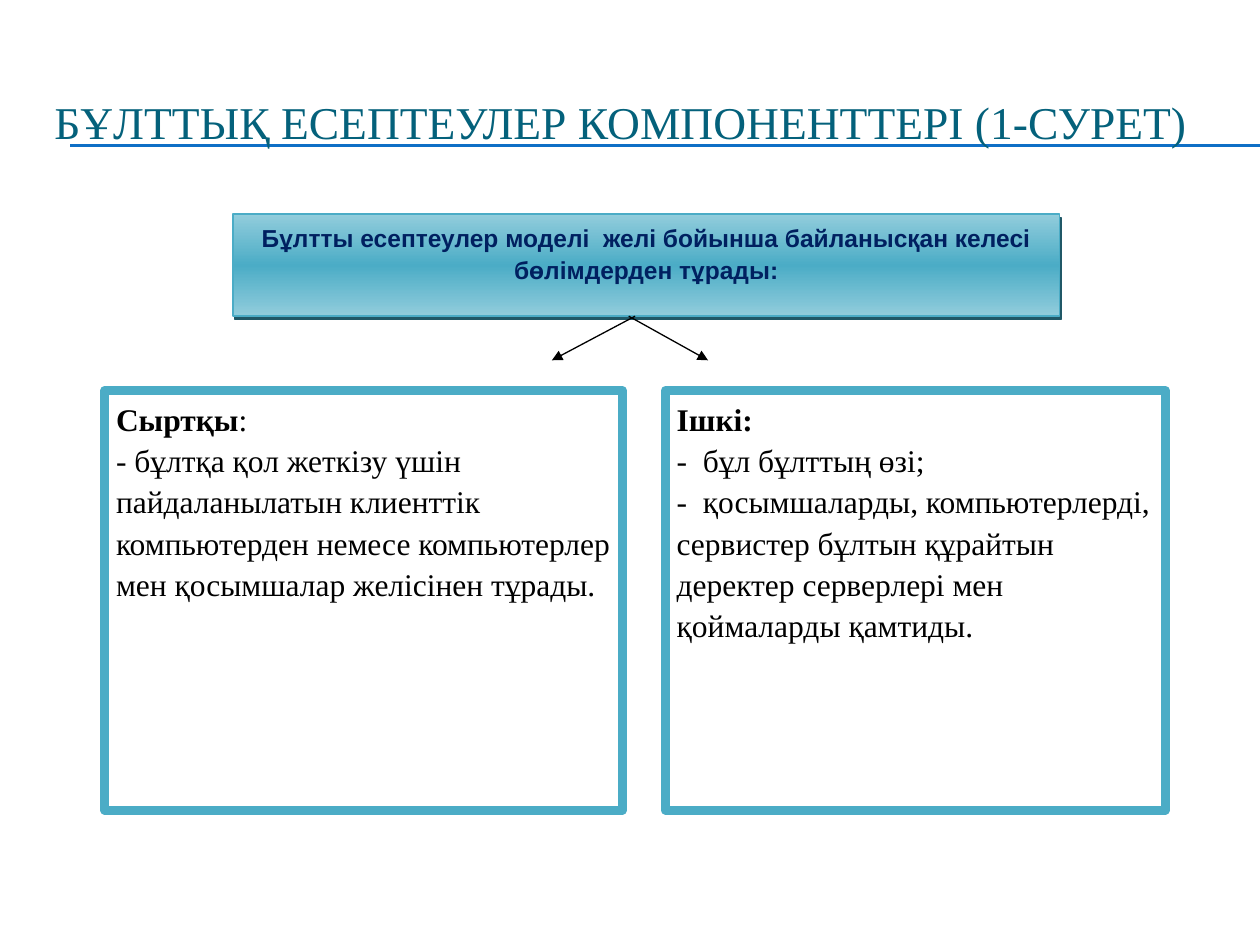
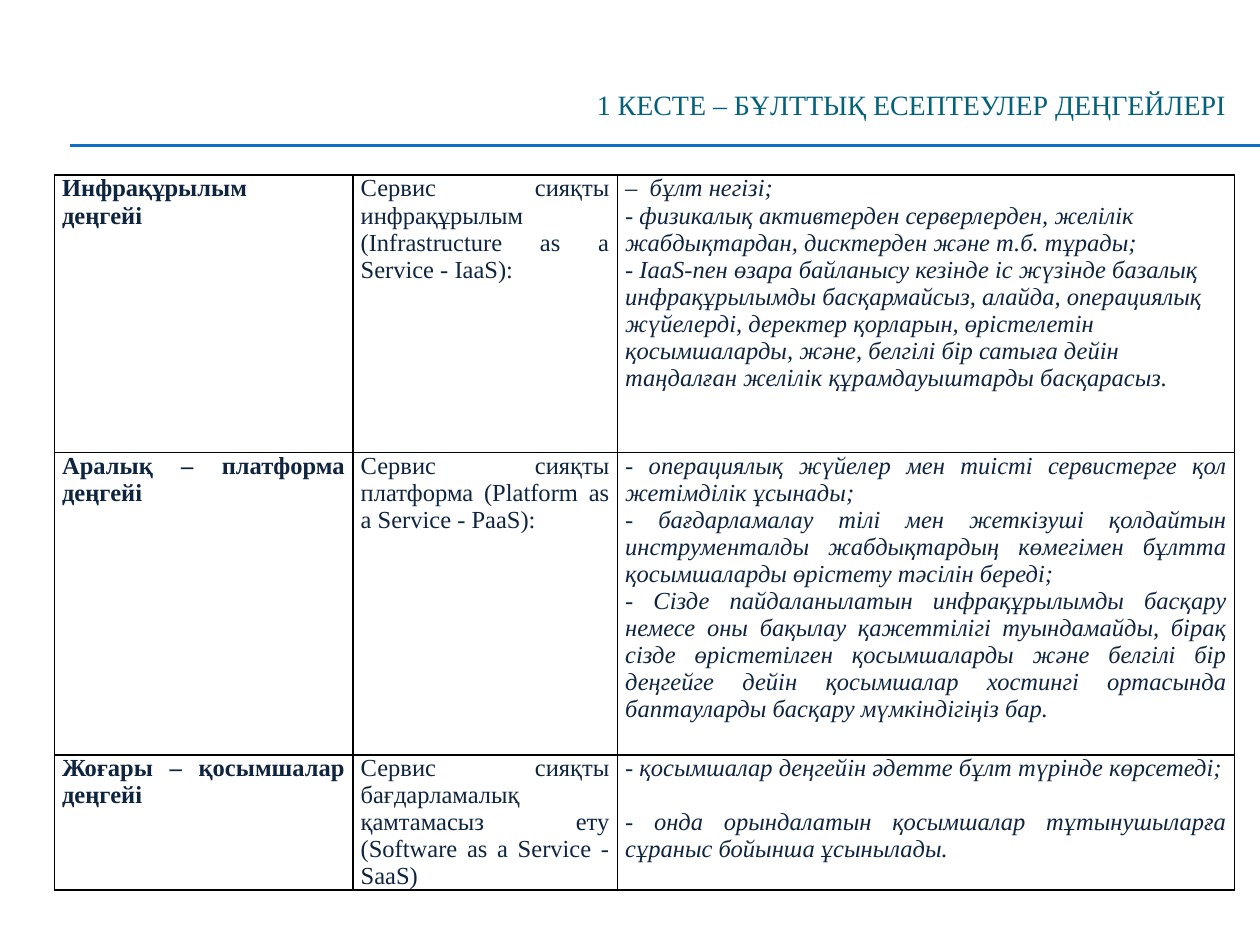
from copy import deepcopy
from dataclasses import dataclass

from lxml.etree import SubElement
from pptx import Presentation
from pptx.dml.color import RGBColor
from pptx.enum.shapes import MSO_CONNECTOR, MSO_SHAPE
from pptx.enum.text import MSO_ANCHOR, MSO_AUTO_SIZE, PP_ALIGN
from pptx.oxml import parse_xml
from pptx.oxml.ns import nsdecls, qn
from pptx.util import Pt


@dataclass(frozen=True)
class Theme:
    title: str = "04617B"
    rule: str = "0F6FC6"
    accent: str = "4BACC6"
    accent_light: str = "92CDDC"
    accent_dark: str = "205867"
    heading: str = "002060"
    table_text: str = "0F243E"
    black: str = "000000"
    white: str = "FFFFFF"
    serif: str = "Times New Roman"
    sans: str = "Arial"
    title_size: float = 26
    caption_size: float = 16
    body_size: float = 18
    small_size: float = 14


THEME = Theme()
BOX_SPACING = 1.09

# Wording of the service level table: (text, text, ...) per cell
LEVELS = [
    (
        ["Инфрақұрылым", "деңгейі"],
        ["Сервис сияқты инфрақұрылым  (Infrastructure as a Service - IaaS):"],
        [
            "–  бұлт негізі;",
            "- физикалық активтерден серверлерден, желілік жабдықтардан, "
            "дисктерден және т.б. тұрады;",
            "- IaaS-пен өзара байланысу кезінде іс жүзінде базалық "
            "инфрақұрылымды басқармайсыз, алайда, операциялық жүйелерді, "
            "деректер қорларын, өрістелетін қосымшаларды, және, белгілі бір "
            "сатыға дейін таңдалған желілік құрамдауыштарды басқарасыз.",
        ],
    ),
    (
        ["Аралық – платформа деңгейі"],
        ["Сервис сияқты платформа (Platform as a Service - PaaS):"],
        [
            "- операциялық жүйелер мен тиісті сервистерге қол жетімділік ұсынады;",
            "- бағдарламалау тілі мен жеткізуші қолдайтын инструменталды "
            "жабдықтардың көмегімен бұлтта қосымшаларды өрістету тәсілін береді;",
            "- Сізде пайдаланылатын инфрақұрылымды басқару немесе оны бақылау "
            "қажеттілігі туындамайды, бірақ сізде өрістетілген қосымшаларды "
            "және белгілі бір деңгейге дейін қосымшалар хостингі ортасында "
            "баптауларды басқару мүмкіндігіңіз бар.",
        ],
    ),
    (
        ["Жоғары  –  қосымшалар деңгейі"],
        ["Сервис сияқты бағдарламалық қамтамасыз ету (Software as a Service - SaaS)"],
        [
            "- қосымшалар деңгейін әдетте бұлт түрінде көрсетеді;",
            "- онда орындалатын қосымшалар тұтынушыларға сұраныс бойынша ұсынылады.",
        ],
    ),
]


def color(value):
    return RGBColor.from_string(value)


def set_values(target, **values):
    for name, value in values.items():
        setattr(target, name, value)


# Text
def add_span(para, text, size, font_color, font=THEME.serif, **style):
    span = para.add_run()
    span.text = text
    set_values(span.font, name=font, size=Pt(size), **style)
    span.font.color.rgb = color(font_color)


def next_para(frame, number, **values):
    para = frame.paragraphs[0] if number == 0 else frame.add_paragraph()
    set_values(para, **values)
    return para


def set_title(page, text, size, align, bottom=3.6):
    frame = page.shapes.title.text_frame
    set_values(frame, word_wrap=True, auto_size=MSO_AUTO_SIZE.NONE,
               vertical_anchor=MSO_ANCHOR.MIDDLE, margin_bottom=Pt(bottom))
    add_span(next_para(frame, 0, alignment=align), text, size, THEME.title)


# Lines and boxes
def add_line(page, start, end, line_color, arrow=False):
    line = page.shapes.add_connector(
        MSO_CONNECTOR.STRAIGHT, *(Pt(value) for value in start + end))
    line.line.color.rgb = color(line_color)
    line.line.width = Pt(0.75)
    properties = line.element.spPr
    if arrow:
        SubElement(properties.find(qn("a:ln")), qn("a:tailEnd"), type="triangle")
    SubElement(properties, qn("a:effectLst"))
    return line


def add_box(page, place, line_width):
    box = page.shapes.add_shape(MSO_SHAPE.RECTANGLE, *(Pt(value) for value in place))
    box.shadow.inherit = False
    box.fill.solid()
    box.fill.fore_color.rgb = color(THEME.white)
    box.line.color.rgb = color(THEME.accent)
    box.line.width = Pt(line_width)
    set_values(box.text_frame, word_wrap=True, vertical_anchor=MSO_ANCHOR.TOP,
               margin_left=Pt(6.5), margin_right=Pt(6.5),
               margin_top=Pt(3.6), margin_bottom=Pt(3.6))
    return box


def add_heading_box(page, text, place):
    box = add_box(page, place, 1)
    box.fill.gradient()
    box.fill.gradient_angle = 90
    stop_list = box.element.spPr.find(".//" + qn("a:gsLst"))
    stop_list.append(deepcopy(stop_list[-1]))
    shades = (THEME.accent_light, THEME.accent, THEME.accent_light)
    for number, (stop, shade) in enumerate(zip(box.fill.gradient_stops, shades)):
        stop.position = number / 2
        stop.color.rgb = color(shade)
    # Hard shadow towards the lower right
    box.element.spPr.find(qn("a:effectLst")).append(parse_xml(
        f'<a:outerShdw {nsdecls("a")} blurRad="0" dist="{Pt(2.2)}" '
        f'dir="{63 * 60000}" algn="ctr" rotWithShape="0">'
        f'<a:srgbClr val="{THEME.accent_dark}"/></a:outerShdw>'))
    para = next_para(box.text_frame, 0, alignment=PP_ALIGN.CENTER,
                     line_spacing=BOX_SPACING)
    add_span(para, text, THEME.small_size, THEME.heading, THEME.sans, bold=True)


def add_component_box(page, place, paragraphs):
    """Each paragraph is a list of (text, bold) spans."""
    box = add_box(page, place, 5)
    for number, spans in enumerate(paragraphs):
        para = next_para(box.text_frame, number, alignment=PP_ALIGN.LEFT,
                         line_spacing=BOX_SPACING)
        for text, bold in spans:
            add_span(para, text, THEME.body_size, THEME.black, bold=bold)


# Table
def set_borders(cell):
    properties = cell._tc.get_or_add_tcPr()
    for number, side in enumerate(("lnL", "lnR", "lnT", "lnB")):
        properties.insert(number, parse_xml(
            f'<a:{side} {nsdecls("a")} w="{Pt(1)}"><a:solidFill>'
            f'<a:srgbClr val="{THEME.black}"/></a:solidFill></a:{side}>'))


def fill_cell(cell, texts, align, gap, style):
    cell.fill.background()
    set_borders(cell)
    set_values(cell, margin_left=Pt(4.5), margin_right=Pt(4.5),
               margin_top=0, margin_bottom=0)
    for number, text in enumerate(texts):
        para = next_para(cell.text_frame, number, alignment=align)
        if number < len(texts) - 1:
            para.space_after = Pt(gap)
        add_span(para, text, THEME.small_size, THEME.table_text, **style)


def add_level_table(page, left, top, widths, heights):
    frame = page.shapes.add_table(
        len(heights), len(widths), Pt(left), Pt(top), Pt(sum(widths)), Pt(sum(heights)))
    table = frame.table
    set_values(table, first_row=False, horz_banding=False)
    for column, width in zip(table.columns, widths):
        column.width = Pt(width)
    for row, height in zip(table.rows, heights):
        row.height = Pt(height)
    column_styles = ({"bold": True}, {"bold": False}, {"bold": False, "italic": True})
    for row_number, level in enumerate(LEVELS):
        for column_number, texts in enumerate(level):
            first_details = (row_number, column_number) == (0, 2)
            last_row = row_number == len(LEVELS) - 1
            fill_cell(table.cell(row_number, column_number), texts,
                      PP_ALIGN.LEFT if first_details else PP_ALIGN.JUSTIFY,
                      15.5 if last_row else 0, column_styles[column_number])


# Shared layout: title place and the double rule below it
def prepare_layout(deck):
    layout = deck.slide_layouts.get_by_name("Title Only")
    set_values(layout.placeholders[0], left=Pt(23.8), top=Pt(36),
               width=Pt(684), height=Pt(66.2))
    return layout


def move_rules_to_layout(page, layout):
    for height in (82.8, 83.5):
        rule = add_line(page, (40.3, height), (720, height), THEME.rule)
        layout.shapes.element.append(rule.element)


def build_components(page):
    set_title(page, "БҰЛТТЫҚ ЕСЕПТЕУЛЕР КОМПОНЕНТТЕРІ (1-СУРЕТ)",
              THEME.title_size, PP_ALIGN.LEFT)
    add_heading_box(
        page,
        "Бұлтты есептеулер моделі  желі бойынша байланысқан келесі бөлімдерден тұрады:",
        (133.2, 122.4, 472.3, 58.3))
    add_component_box(page, (59.8, 223.2, 295.9, 239.8), [
        [("Сыртқы", True), (":", False)],
        [("- бұлтқа қол жеткізу үшін пайдаланылатын клиенттік компьютерден "
          "немесе компьютерлер мен қосымшалар желісінен тұрады.", False)],
    ])
    add_component_box(page, (380.2, 223.2, 285.8, 239.8), [
        [("Ішкі:", True)],
        [("-  бұл бұлттың өзі;", False)],
        [("-  қосымшаларды, компьютерлерді, сервистер бұлтын құрайтын "
          "деректер серверлері мен қоймаларды қамтиды.", False)],
    ])
    for start, end in ((362.9, 315.4), (359.3, 404.6)):
        add_line(page, (start, 180.7), (end, 205.9), THEME.black, arrow=True)


def build_levels(page):
    set_title(page, "1 КЕСТЕ – БҰЛТТЫҚ ЕСЕПТЕУЛЕР ДЕҢГЕЙЛЕРІ",
              THEME.caption_size, PP_ALIGN.RIGHT, bottom=22)
    add_level_table(page, 31, 100.1, (170.6, 151.2, 352.8), (158.4, 172.8, 76.3))


def main():
    deck = Presentation()
    set_values(deck, slide_width=Pt(720), slide_height=Pt(540))
    layout = prepare_layout(deck)
    pages = [deck.slides.add_slide(layout) for _ in range(2)]
    move_rules_to_layout(pages[0], layout)
    build_components(pages[0])
    build_levels(pages[1])
    deck.save("out.pptx")


if __name__ == "__main__":
    main()
